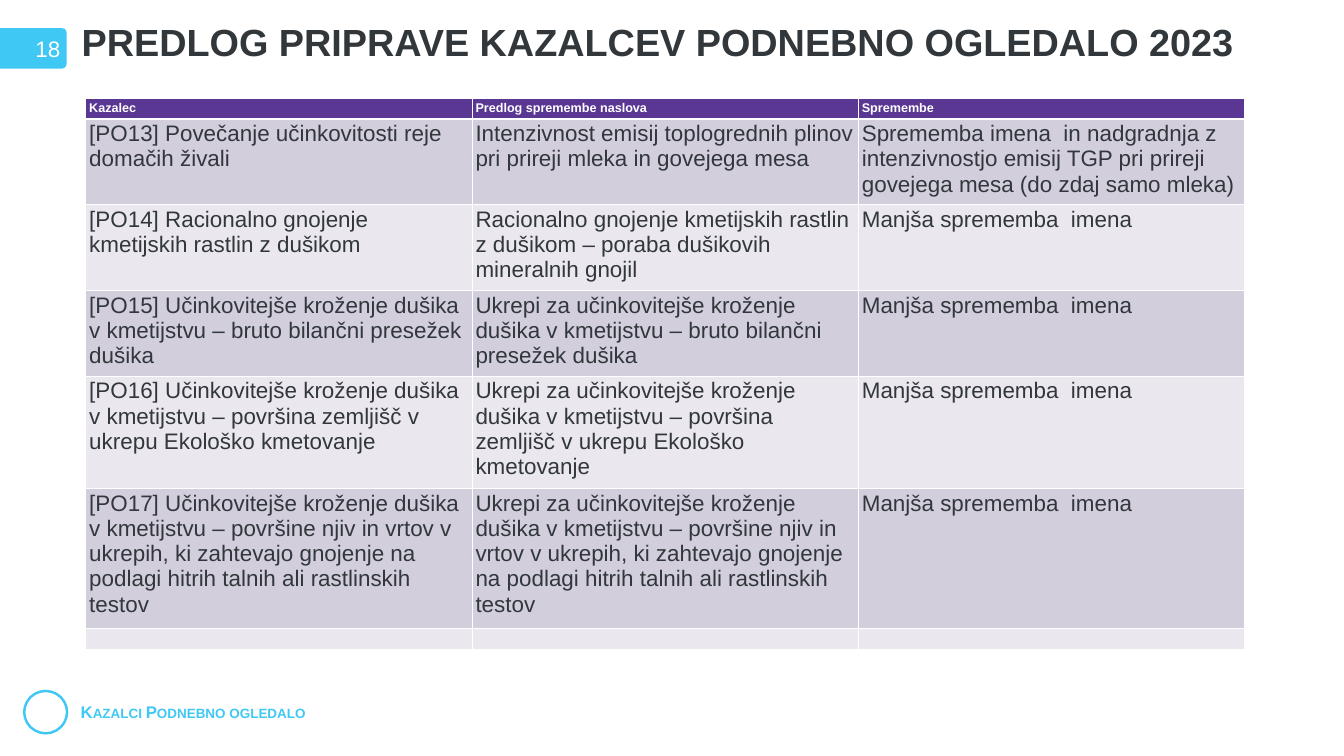
from lxml.etree import SubElement
from pptx import Presentation
from pptx.dml.color import RGBColor
from pptx.enum.shapes import MSO_SHAPE
from pptx.enum.text import MSO_ANCHOR, PP_ALIGN
from pptx.oxml.ns import qn
from pptx.util import Inches, Pt

COLORS = {
    "cyan": "40C8F4",
    "purple": "5A3793",
    "dark_band": "D2CEDC",
    "light_band": "EAE8EE",
    "text": "31373B",
    "white": "FFFFFF",
}


def write_text(text_frame, text, size, color, bold=False):
    text_frame.text = text
    text_frame.word_wrap = True
    font = text_frame.paragraphs[0].runs[0].font
    font.name = "Arial"
    font.size = Pt(size)
    font.bold = bold
    font.color.rgb = RGBColor.from_string(COLORS[color])


def set_borders(cell, bottom_width, top_width):
    properties = cell._tc.get_or_add_tcPr()
    widths = {"a:lnL": 1, "a:lnR": 1, "a:lnT": top_width, "a:lnB": bottom_width}
    for position, (tag, width) in enumerate(widths.items()):
        line = SubElement(properties, qn(tag), w=str(Pt(width)))
        fill = SubElement(line, qn("a:solidFill"))
        SubElement(fill, qn("a:srgbClr"), val=COLORS["white"])
        properties.insert(position, line)


presentation = Presentation()
presentation.slide_width = Inches(26.66)
presentation.slide_height = Inches(15)
slide = presentation.slides.add_slide(presentation.slide_layouts[6])

# Footer: section name and ring
footer = slide.shapes.add_textbox(Inches(1.53), Inches(13.88), Inches(5.74), Inches(0.5))
write_text(footer.text_frame, "Kazalci Podnebno ogledalo", 24, "cyan", bold=True)
footer.text_frame.vertical_anchor = MSO_ANCHOR.MIDDLE
footer.text_frame.margin_left = Inches(0.07)
footer_run = footer.text_frame.paragraphs[0].runs[0]
footer_run.font._element.set("cap", "small")

ring = slide.shapes.add_shape(
    MSO_SHAPE.OVAL, Inches(0.48), Inches(13.71), Inches(0.85), Inches(0.84))
ring.shadow.inherit = False
ring.fill.background()
ring.line.color.rgb = RGBColor.from_string(COLORS["cyan"])
ring.line.width = Pt(3.5)

# Title
title = slide.shapes.add_textbox(Inches(1.57), Inches(0.39), Inches(23.92), Inches(2.9))
write_text(title.text_frame, "PREDLOG PRIPRAVE KAZALCEV PODNEBNO OGLEDALO 2023",
           54, "text", bold=True)
title.text_frame.margin_left = Inches(0.05)
title.text_frame.margin_top = Inches(0.09)
title.text_frame.paragraphs[0].line_spacing = 0.9

# Page number tab
page_tab = slide.shapes.add_shape(
    MSO_SHAPE.ROUNDED_RECTANGLE, Inches(-0.51), Inches(0.56), Inches(1.83), Inches(0.8))
page_tab.adjustments[0] = 0.11
page_tab.shadow.inherit = False
page_tab.fill.solid()
page_tab.fill.fore_color.rgb = RGBColor.from_string(COLORS["cyan"])
page_tab.line.fill.background()
write_text(page_tab.text_frame, "18", 32, "white")
page_tab.text_frame.vertical_anchor = MSO_ANCHOR.MIDDLE
page_tab.text_frame.paragraphs[0].alignment = PP_ALIGN.RIGHT

# Indicator table; the last row is empty
MINOR_CHANGE = "Manjša sprememba  imena"
ROWS = [
    ("Kazalec", "Predlog spremembe naslova", "Spremembe"),
    ("[PO13] Povečanje učinkovitosti reje domačih živali",
     "Intenzivnost emisij toplogrednih plinov pri prireji mleka in govejega mesa",
     "Sprememba imena  in nadgradnja z intenzivnostjo emisij TGP pri prireji "
     "govejega mesa (do zdaj samo mleka)"),
    ("[PO14] Racionalno gnojenje kmetijskih rastlin z dušikom",
     "Racionalno gnojenje kmetijskih rastlin z dušikom – poraba dušikovih "
     "mineralnih gnojil",
     MINOR_CHANGE),
]
CYCLING_TOPICS = {
    "PO15": "bruto bilančni presežek dušika",
    "PO16": "površina zemljišč v ukrepu Ekološko kmetovanje",
    "PO17": "površine njiv in vrtov v ukrepih, ki zahtevajo gnojenje na podlagi "
            "hitrih talnih ali rastlinskih testov",
}
for code, topic in CYCLING_TOPICS.items():
    ROWS.append((f"[{code}] Učinkovitejše kroženje dušika v kmetijstvu – {topic}",
                 f"Ukrepi za učinkovitejše kroženje dušika v kmetijstvu – {topic}",
                 MINOR_CHANGE))
ROWS.append(("", "", ""))

ROW_HEIGHT = 0.41
table = slide.shapes.add_table(
    len(ROWS), 3, Inches(1.7), Inches(1.95),
    Inches(22.99), Inches(ROW_HEIGHT * len(ROWS))).table

for row_index, texts in enumerate(ROWS):
    table.rows[row_index].height = Inches(ROW_HEIGHT)
    is_header = row_index == 0
    if is_header:
        band, size, color = "purple", 18, "white"
    else:
        band = "dark_band" if row_index % 2 else "light_band"
        size, color = 32, "text"
    for column_index, text in enumerate(texts):
        cell = table.cell(row_index, column_index)
        cell.margin_left = cell.margin_right = Inches(0.07)
        cell.fill.solid()
        cell.fill.fore_color.rgb = RGBColor.from_string(COLORS[band])
        set_borders(cell, bottom_width=3 if is_header else 1,
                    top_width=3 if row_index == 1 else 1)
        if text:
            write_text(cell.text_frame, text, size, color, bold=is_header)
        else:
            # Keeps the empty row low
            SubElement(cell.text_frame.paragraphs[0]._p, qn("a:endParaRPr"), sz="1800")

presentation.save("out.pptx")
